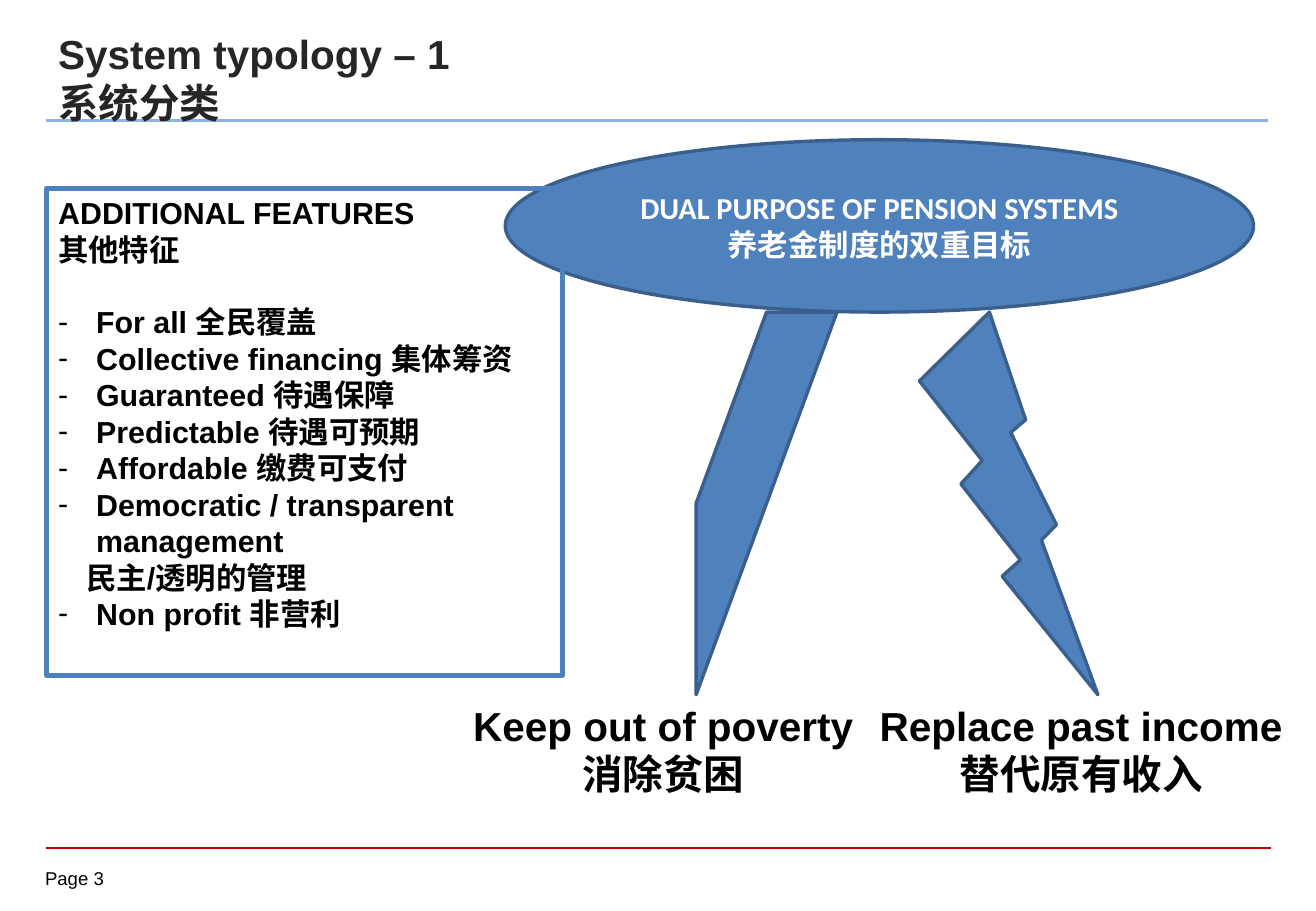
from lxml import etree
from pptx import Presentation
from pptx.dml.color import RGBColor
from pptx.enum import shapes, text
from pptx.oxml.ns import qn
from pptx.util import Pt

# Content
TITLE = ["System typology – 1", "系统分类"]
PURPOSE = ["DUAL PURPOSE OF PENSION SYSTEMS", "养老金制度的双重目标"]
FEATURES_HEADING = ["ADDITIONAL FEATURES", "其他特征"]
FEATURES = [
    "For all 全民覆盖",
    "Collective financing 集体筹资",
    "Guaranteed 待遇保障",
    "Predictable 待遇可预期",
    "Affordable 缴费可支付",
    "Democratic / transparent management",
    "民主/透明的管理",
    "Non profit 非营利",
]
CONTINUATION = "民主/透明的管理"
PAGE_LABEL = ["Page 3"]

THEME = {
    "blue": "4F81BD", "edge": "3A5F8C", "sky": "8EB4E3", "red": "C00000",
    "title": "262626", "black": "000000", "white": "FFFFFF",
    "large": 24, "body": 18, "small": 11,
    "font": "Arial", "oval_font": "Calibri",
}

# Places: left, top, width, height in points
LEFT = 27.4
OVAL = (299.5, 82.8, 443.5, 102.2)
LEG_TOP, LEG_HEIGHT = OVAL[1] + OVAL[3], 226.8
LABEL_TOP = LEG_TOP + LEG_HEIGHT
# Each leg: preset, left, width, label left, label width, label lines
LEGS = [
    (shapes.MSO_SHAPE.DIAGONAL_STRIPE, 412.6, 83.5, 265, 256.3,
     ["Keep out of poverty", "消除贫困"]),
    (shapes.MSO_SHAPE.LIGHTNING_BOLT, 545, 105.8, 510.5, 260.6,
     ["Replace past income", "替代原有收入"]),
]
# Each rule: y, right end, colour, width
RULES = [(502.6, 753.1, "red", 1), (71.3, 751.7, "sky", 1.5)]


def rgb(name):
    return RGBColor.from_string(THEME[name])


def add_rule(page, y, right, colour, width):
    rule = page.shapes.add_connector(
        shapes.MSO_CONNECTOR.STRAIGHT, Pt(LEFT), Pt(y), Pt(right), Pt(y))
    rule.line.color.rgb = rgb(colour)
    rule.line.width = Pt(width)
    etree.SubElement(rule._element.spPr, qn("a:effectLst"))


def add_shape(page, preset, place, fill, line, width):
    shape = page.shapes.add_shape(preset, *map(Pt, place))
    shape.shadow.inherit = False
    if fill:
        shape.fill.solid()
        shape.fill.fore_color.rgb = rgb(fill)
    else:
        shape.fill.background()
    shape.line.color.rgb = rgb(line)
    shape.line.width = Pt(width)
    return shape


def write(box, lines, size, colour, font="font", bold=True, align="LEFT",
          anchor="TOP", wrap=True):
    frame = box.text_frame
    frame.word_wrap = wrap
    frame.vertical_anchor = getattr(text.MSO_ANCHOR, anchor)
    style = {"size": Pt(THEME[size]), "name": THEME[font], "bold": bold}
    for index, line in enumerate(lines):
        para = frame.paragraphs[0] if index == 0 else frame.add_paragraph()
        para.alignment = getattr(text.PP_ALIGN, align)
        span = para.add_run()
        span.text = line
        for name, value in style.items():
            setattr(span.font, name, value)
        span.font.color.rgb = rgb(colour)
    return frame


def add_text(page, place, lines, size, colour, **options):
    box = page.shapes.add_textbox(*map(Pt, place))
    return write(box, lines, size, colour, **options)


def add_dash(para, indent):
    props = para._p.get_or_add_pPr()
    props.set("marL", str(Pt(indent)))
    props.set("indent", str(-Pt(indent)))
    etree.SubElement(props, qn("a:buFont"), typeface=THEME["font"])
    etree.SubElement(props, qn("a:buChar"), char="-")


def main():
    deck = Presentation()
    deck.slide_width, deck.slide_height = Pt(780), Pt(540)
    page = deck.slides.add_slide(deck.slide_layouts[6])

    # Rules, page label and title
    for rule in RULES:
        add_rule(page, *rule)
    footer = add_text(page, (LEFT - 0.7, 514.1, 52.6, 15.8), PAGE_LABEL,
                      "small", "black", bold=False)
    for side in ("left", "top", "right", "bottom"):
        setattr(footer, f"margin_{side}", 0)
    add_text(page, (LEFT, 13.7, 544.3, 51.1), TITLE, "large", "title")

    # Dual purpose oval standing on two labelled legs
    oval = add_shape(page, shapes.MSO_SHAPE.OVAL, OVAL, "blue", "edge", 2)
    write(oval, PURPOSE, "body", "white", font="oval_font",
          align="CENTER", anchor="MIDDLE")
    for preset, left, width, label_left, label_width, label in LEGS:
        add_shape(page, preset, (left, LEG_TOP, width, LEG_HEIGHT),
                  "blue", "edge", 2)
        add_text(page, (label_left, LABEL_TOP, label_width, 65.5), label,
                 "large", "black", align="CENTER", wrap=False)

    # Additional features
    panel = add_shape(page, shapes.MSO_SHAPE.RECTANGLE,
                      (LEFT, 111.6, 306, 288.7), None, "blue", 2.75)
    frame = write(panel, FEATURES_HEADING + FEATURES, "body", "black")
    bullets = frame.paragraphs[len(FEATURES_HEADING):]
    for para, feature in zip(bullets, FEATURES):
        if feature == CONTINUATION:
            para._p.get_or_add_pPr().set("marL", str(Pt(16.6)))
        else:
            add_dash(para, 22.5)
    bullets[0].space_before = Pt(21.6)

    deck.save("out.pptx")


if __name__ == "__main__":
    main()
